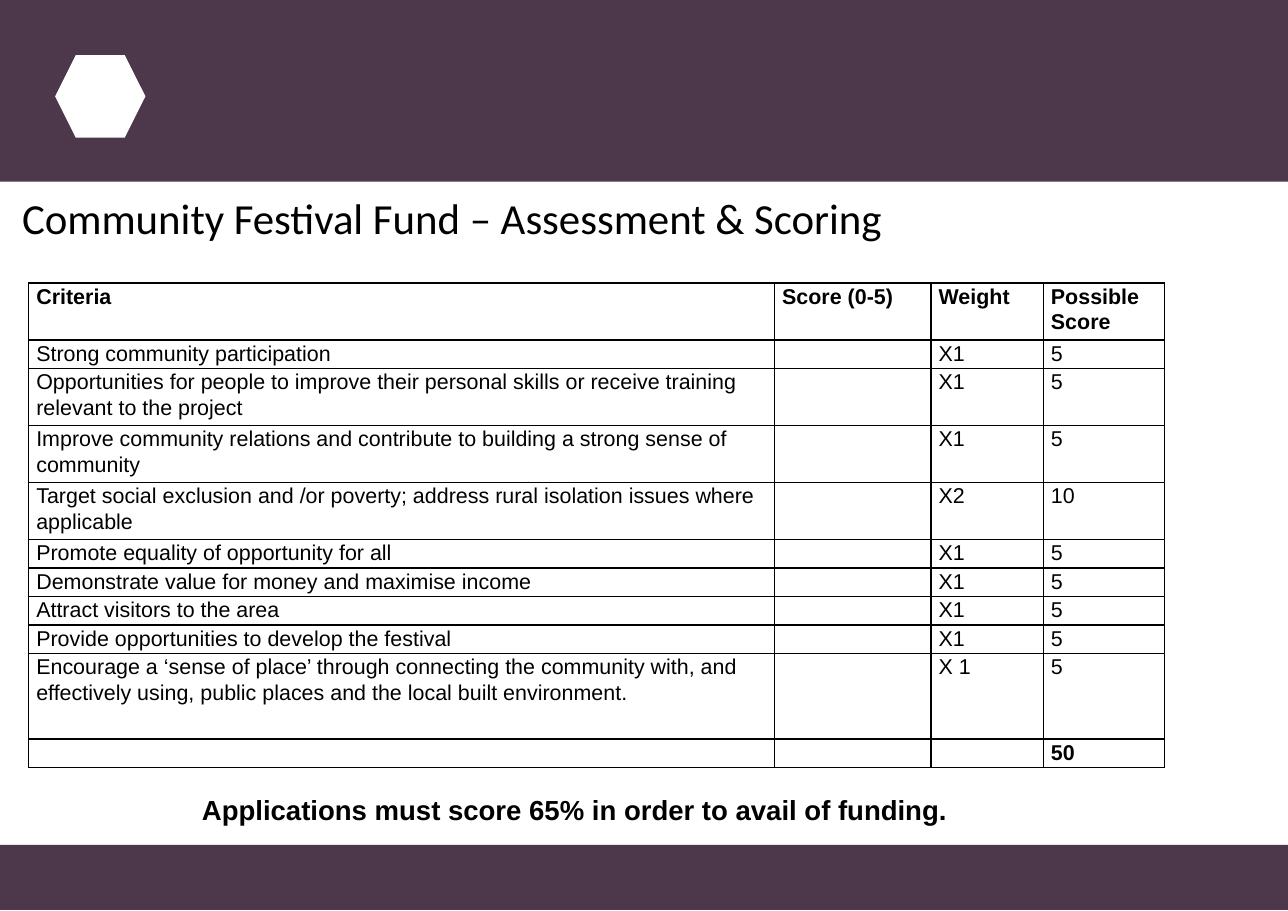
from dataclasses import dataclass

from lxml.etree import SubElement
from pptx import Presentation
from pptx.dml.color import RGBColor
from pptx.enum.shapes import MSO_SHAPE
from pptx.enum.text import MSO_ANCHOR, MSO_AUTO_SIZE, PP_ALIGN
from pptx.oxml.ns import qn
from pptx.util import Inches, Pt


@dataclass(frozen=True)
class Theme:
    plum: RGBColor = RGBColor(0x4C, 0x37, 0x4B)
    white: RGBColor = RGBColor(0xFF, 0xFF, 0xFF)
    black: RGBColor = RGBColor(0, 0, 0)
    title_font: str = "Calibri"
    body_font: str = "Arial"
    title_size: Pt = Pt(28)
    cell_size: Pt = Pt(14)
    note_size: Pt = Pt(18)
    border_width: Pt = Pt(1)
    line_spacing: float = 1.07


THEME = Theme()
PAGE_WIDTH, PAGE_HEIGHT = 11.69, 8.27
COLUMN_WIDTHS = (6.77, 1.42, 1.02, 1.1)

# Each row: height in text lines, bold, cell texts
CRITERIA_ROWS = (
    (2, True, ("Criteria", "Score (0-5)", "Weight", "Possible Score")),
    (1, False, ("Strong community participation", "", "X1", "5")),
    (2, False, ("Opportunities for people to improve their personal skills or receive "
                "training relevant to the project", "", "X1", "5")),
    (2, False, ("Improve community relations and contribute to building a strong sense "
                "of community", "", "X1", "5")),
    (2, False, ("Target social exclusion and /or poverty; address rural isolation issues "
                "where applicable", "", "X2", "10")),
    (1, False, ("Promote equality of opportunity for all", "", "X1", "5")),
    (1, False, ("Demonstrate value for money and maximise income", "", "X1", "5")),
    (1, False, ("Attract visitors to the area", "", "X1", "5")),
    (1, False, ("Provide opportunities to develop the festival", "", "X1", "5")),
    (3, False, ("Encourage a ‘sense of place’ through connecting the community with, and "
                "effectively using, public places and the local built environment.",
                "", "X 1", "5")),
    (1, True, ("", "", "", "50")),
)


def apply_format(target, values):
    for name, value in values.items():
        setattr(target, name, value)


def write_text(paragraph, text, font_name, size, bold=False):
    run = paragraph.add_run()
    run.text = text
    apply_format(run.font, {"name": font_name, "size": size, "bold": bold})
    run.font.color.rgb = THEME.black


def add_plain_shape(slide, kind, box, color):
    plain = slide.shapes.add_shape(kind, *map(Inches, box))
    plain.shadow.inherit = False
    plain.fill.solid()
    plain.fill.fore_color.rgb = color
    plain.line.fill.background()


def add_header(slide, left, top, width, height):
    add_plain_shape(slide, MSO_SHAPE.RECTANGLE, (left, top, width, height), THEME.plum)
    # Plain emblem in the band
    add_plain_shape(slide, MSO_SHAPE.HEXAGON, (left + 0.5, top + 0.5, 0.82, 0.75), THEME.white)


def add_footer(slide, left, top, width, height):
    add_plain_shape(slide, MSO_SHAPE.RECTANGLE, (left, top, width, height), THEME.plum)


def place_title(slide, left, top, width, height):
    title = slide.shapes.title
    apply_format(title, {"left": Inches(left), "top": Inches(top),
                         "width": Inches(width), "height": Inches(height)})
    apply_format(title.text_frame, {"word_wrap": True, "auto_size": MSO_AUTO_SIZE.NONE,
                                    "vertical_anchor": MSO_ANCHOR.TOP})
    heading = title.text_frame.paragraphs[0]
    heading.alignment = PP_ALIGN.LEFT
    write_text(heading, "Community Festival Fund – Assessment & Scoring",
               THEME.title_font, THEME.title_size)


def add_borders(cell):
    properties = cell._tc.get_or_add_tcPr()
    for side in ("lnL", "lnR", "lnT", "lnB"):
        border = SubElement(properties, qn(f"a:{side}"), w=str(THEME.border_width))
        ink = SubElement(border, qn("a:solidFill"))
        SubElement(ink, qn("a:srgbClr"), val=str(THEME.black))


def fill_cell(cell, text, bold):
    add_borders(cell)
    cell.fill.background()
    apply_format(cell, {"margin_left": Inches(0.07), "margin_right": Inches(0.07),
                        "margin_top": 0, "margin_bottom": 0})
    entry = cell.text_frame.paragraphs[0]
    entry.line_spacing = THEME.line_spacing
    if text:
        write_text(entry, text, THEME.body_font, THEME.cell_size, bold)
    else:
        # Keeps empty cells from stretching their row
        SubElement(entry._p, qn("a:endParaRPr"), sz=str(int(THEME.cell_size.pt * 100)))


def add_criteria_table(slide, left, top, width, height):
    criteria = slide.shapes.add_table(len(CRITERIA_ROWS), len(COLUMN_WIDTHS),
                                      *map(Inches, (left, top, width, height))).table
    apply_format(criteria, {"first_row": False, "horz_banding": False})
    for column, column_width in zip(criteria.columns, COLUMN_WIDTHS):
        column.width = Inches(column_width)
    line_height = height / sum(lines for lines, _, _ in CRITERIA_ROWS)
    for row, (lines, bold, texts) in zip(criteria.rows, CRITERIA_ROWS):
        row.height = Inches(lines * line_height)
        for cell, text in zip(row.cells, texts):
            fill_cell(cell, text, bold)


def add_threshold_note(slide, left, top, width, height):
    note = slide.shapes.add_textbox(*map(Inches, (left, top, width, height))).text_frame
    note.word_wrap = True
    threshold = note.paragraphs[0]
    apply_format(threshold, {"alignment": PP_ALIGN.CENTER, "line_spacing": THEME.line_spacing})
    write_text(threshold, "Applications must score 65% in order to avail of funding.",
               THEME.body_font, THEME.note_size, bold=True)


def main():
    deck = Presentation()
    apply_format(deck, {"slide_width": Inches(PAGE_WIDTH), "slide_height": Inches(PAGE_HEIGHT)})
    slide = deck.slides.add_slide(deck.slide_layouts.get_by_name("Title Only"))
    add_header(slide, 0, 0, PAGE_WIDTH, 1.65)
    add_footer(slide, 0, 7.67, PAGE_WIDTH, 0.59)
    place_title(slide, 0.1, 1.69, 9.76, 0.57)
    add_criteria_table(slide, 0.26, 2.57, sum(COLUMN_WIDTHS), 4.4)
    add_threshold_note(slide, 1.04, 7.13, 8.35, 0.43)
    deck.save("out.pptx")


if __name__ == "__main__":
    main()
